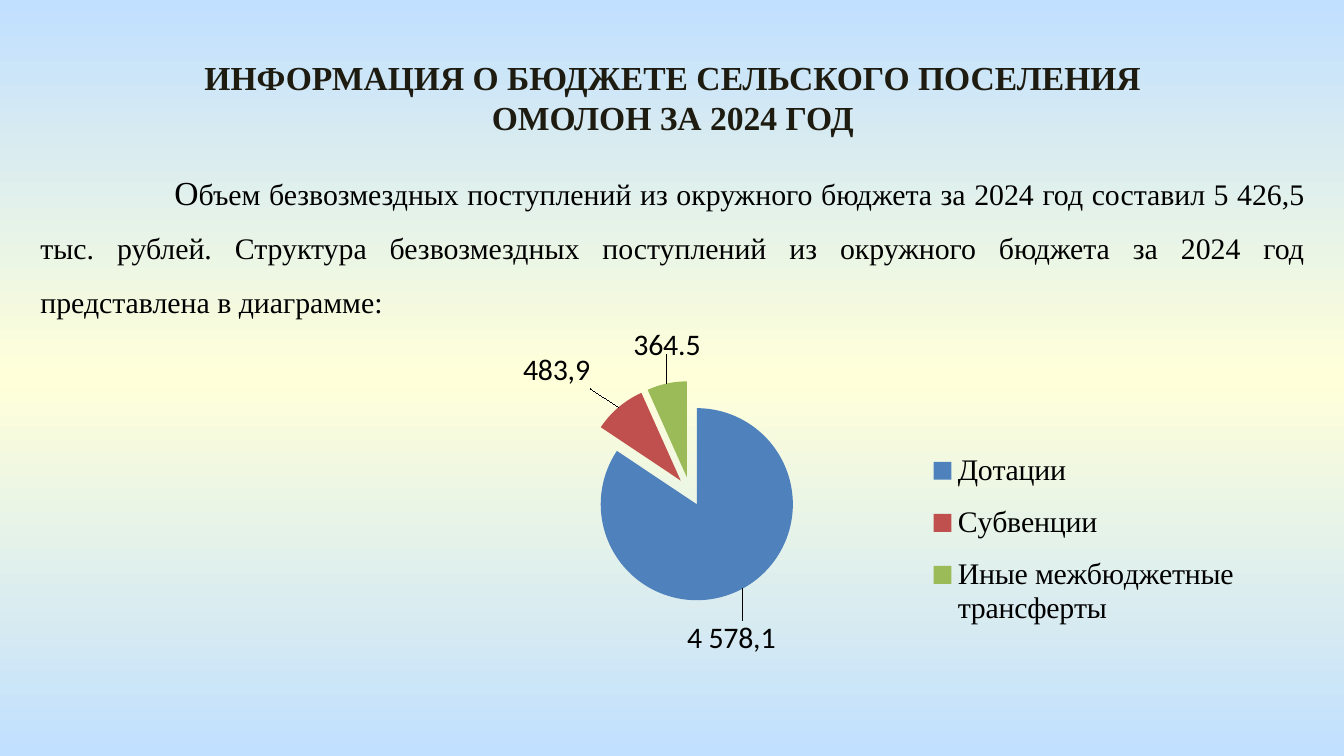
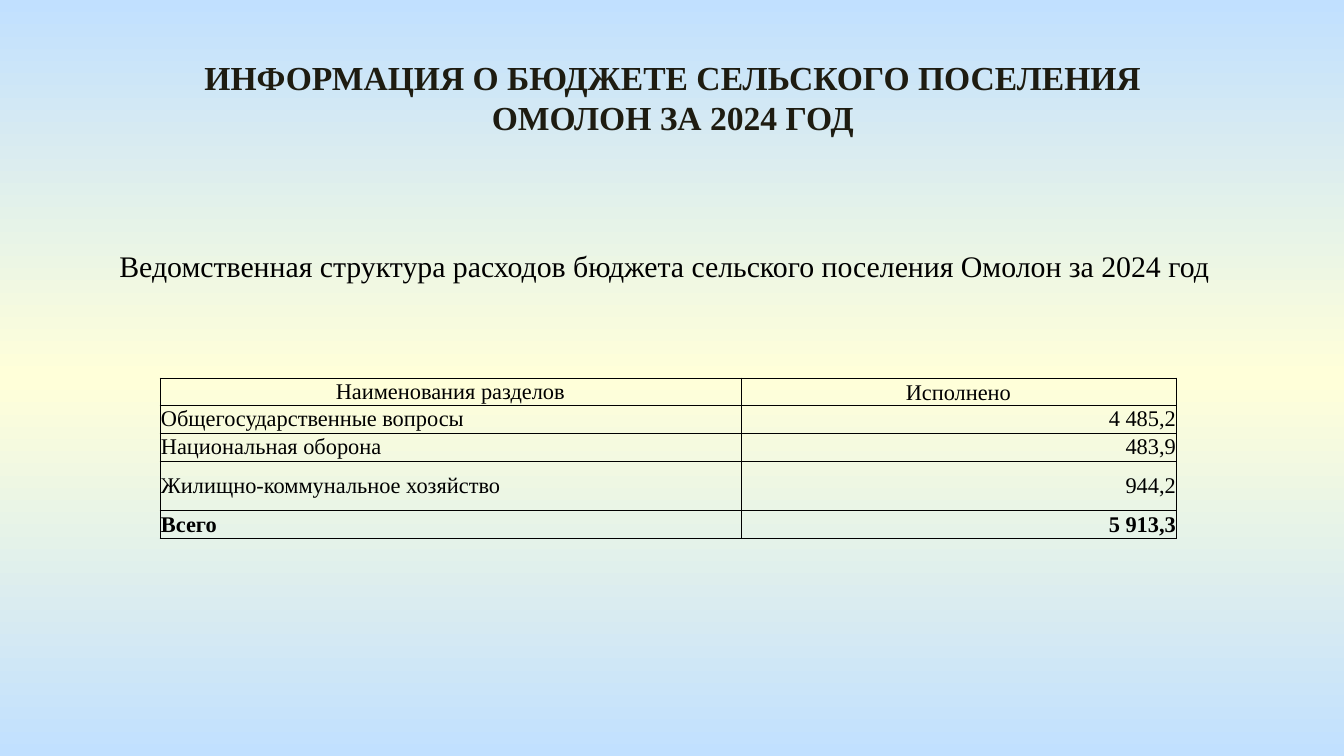
from copy import deepcopy

from lxml import etree
from pptx import Presentation
from pptx import util as u
from pptx.chart.data import CategoryChartData
from pptx.dml.color import RGBColor
from pptx.enum import chart as ch, text as t
from pptx.oxml import ns

PX = 914400 / 134.4
SERIF, SANS = "Times New Roman", "Calibri"
HUES = {"sky": "C1E0FF", "cream": "FFFFD9", "title": "1E1C11", "ink": "000000",
        "blue": "4F81BD", "red": "C0504D", "green": "9BBB59"}
TITLE = ["ИНФОРМАЦИЯ О БЮДЖЕТЕ СЕЛЬСКОГО ПОСЕЛЕНИЯ", "ОМОЛОН ЗА 2024 ГОД"]
ALIGN = {"l": t.PP_ALIGN.LEFT, "c": t.PP_ALIGN.CENTER,
         "r": t.PP_ALIGN.RIGHT, "j": t.PP_ALIGN.JUSTIFY}


def put(frame, lines, size=16, face=SERIF, hue="ink", bold=False, align="l",
        space=1.0, indent=0):
    """Fill a text frame; each line is a string or a list of (text, size) runs."""
    for i, line in enumerate(lines):
        para = frame.paragraphs[0] if i == 0 else frame.add_paragraph()
        para.alignment = ALIGN[align]
        para.line_spacing = space
        para.space_before = u.Pt(0)
        props = para._p.get_or_add_pPr()
        props.set("marL", "0")
        props.set("indent", str(int(indent * PX)))
        etree.SubElement(props, ns.qn("a:buNone"))
        for words, pts in [(line, size)] if isinstance(line, str) else line:
            run = para.add_run()
            run.text = words
            run.font.size = u.Pt(pts)
            run.font.name = face
            run.font.bold = bold
            run.font.color.rgb = RGBColor.from_string(HUES[hue])


def place(node, at, **vals):
    """Give a chart part a manual layout, as child number `at`."""
    for old in node.findall(ns.qn("c:layout")):
        node.remove(old)
    lay = etree.Element(ns.qn("c:layout"))
    man = etree.SubElement(lay, ns.qn("c:manualLayout"))
    for tag, val in vals.items():
        etree.SubElement(man, ns.qn("c:" + tag)).set("val", str(val))
    node.insert(at, lay)


prs = Presentation()
prs.slide_width, prs.slide_height = int(1344 * PX), int(756 * PX)

# Shared background
master = prs.slide_master
fill = master.background.fill
fill.gradient()
fill.gradient_angle = 270
stops = next(master.element.iter(ns.qn("a:gsLst")))
stops.insert(1, deepcopy(stops[0]))
for stop, hue, pos in zip(fill.gradient_stops, ["sky", "cream", "sky"], [0, 0.5, 1]):
    stop.color.rgb = RGBColor.from_string(HUES[hue])
    stop.position = pos

# Titles and body text of both slides
intro = [("О", 18), ("бъем безвозмездных поступлений из окружного бюджета за 2024 год "
                     "составил 5 426,5 тыс. рублей. Структура безвозмездных поступлений "
                     "из окружного бюджета за 2024 год представлена в диаграмме:", 16)]
head = "Ведомственная структура расходов бюджета сельского поселения Омолон за 2024 год"
pages = [((27, 145, 1292, 183), intro, 1.5, 134), ((106, 241, 1133, 86), head, 1.0, 0)]
slides = []
for box, words, space, indent in pages:
    slide = prs.slides.add_slide(prs.slide_layouts[1])
    slides.append(slide)
    title, body = slide.placeholders
    for shape, spot in [(title, (85, 50, 1176, 95)), (body, box)]:
        shape.left, shape.top, shape.width, shape.height = [int(n * PX) for n in spot]
        shape.text_frame.auto_size = t.MSO_AUTO_SIZE.NONE
        shape.text_frame.vertical_anchor = t.MSO_ANCHOR.TOP
    put(title.text_frame, TITLE, size=18, hue="title", bold=True, align="c")
    put(body.text_frame, [words], align="j", space=space, indent=indent)

# Slide 1: pie of transfers
data = CategoryChartData(number_format="#,##0.0")
data.categories = ["Дотации", "Субвенции", "Иные межбюджетные трансферты"]
data.add_series("Series 1", [4578.1, 483.9, 364.5])
spot = [int(n * PX) for n in (85, 327, 1175, 417)]
chart = slides[0].shapes.add_chart(ch.XL_CHART_TYPE.PIE, *spot, data).chart
chart.has_title = False
chart.font.size, chart.font.name = u.Pt(18), SANS
chart.font.color.rgb = RGBColor.from_string(HUES["ink"])
chart.has_legend = True
legend = chart.legend
legend.position = ch.XL_LEGEND_POSITION.RIGHT
legend.include_in_layout = False
legend.font.size, legend.font.name = u.Pt(16), SERIF
place(legend._element, 1, xMode="edge", yMode="edge", x=0.71, y=0.26, w=0.28, h=0.5)
place(chart._chartSpace.chart.plotArea, 0, layoutTarget="inner", xMode="edge",
      yMode="edge", x=0.42, y=0.13, w=0.19, h=0.53)

pie = chart.plots[0]
pie.vary_by_categories = True
row = pie.series[0]
labels = row.data_labels
labels.show_value = True
labels.number_format, labels.number_format_is_linked = "#,##0.0", False
labels.font.size = u.Pt(16)
parts = [("blue", "4 578,1", -0.05, 0.06), ("red", "483,9", -0.02, -0.03),
         ("green", None, 0.03, -0.05)]
for i, (hue, words, x, y) in enumerate(parts):
    point = row.points[i]
    point.format.fill.solid()
    point.format.fill.fore_color.rgb = RGBColor.from_string(HUES[hue])
    label = point.data_label
    if words:
        put(label.text_frame, [words], face=SANS)
    else:
        label.font.size = u.Pt(16)
    label.position = ch.XL_LABEL_POSITION.OUTSIDE_END
    place(label._dLbl, 1, x=x, y=y)
burst = etree.Element(ns.qn("c:explosion"))
burst.set("val", "15")
row._element.find(ns.qn("c:dPt")).addprevious(burst)

# Slide 2: spending table
rows = [("Наименования разделов", "Исполнено", 27),
        ("Общегосударственные вопросы", "4 485,2", 28),
        ("Национальная оборона", "483,9", 28),
        ("Жилищно-коммунальное хозяйство", "944,2", 50),
        ("Всего", "5 913,3", 28)]
spot = [int(n * PX) for n in (160, 378, 1016, 161)]
table = slides[1].shapes.add_table(len(rows), 2, *spot).table
table.first_row = table.horz_banding = False
for col, wide in zip(table.columns, (581, 435)):
    col.width = int(wide * PX)
for r, (*texts, high) in enumerate(rows):
    table.rows[r].height = int(high * PX)
    for c, words in enumerate(texts):
        cell = table.cell(r, c)
        cell.margin_left = cell.margin_right = cell.margin_top = int((r == 0 or c == 0) * PX)
        cell.margin_bottom = 0
        low = r == 0 and c == 1
        cell.vertical_anchor = t.MSO_ANCHOR.BOTTOM if low else t.MSO_ANCHOR.MIDDLE
        put(cell.text_frame, [words], size=12, bold=r == len(rows) - 1,
            align="c" if r == 0 else "lr"[c])
        props = cell._tc.get_or_add_tcPr()
        for side in ("lnL", "lnR", "lnT", "lnB"):
            line = etree.SubElement(props, ns.qn("a:" + side), w=str(u.Pt(0.5)))
            solid = etree.SubElement(line, ns.qn("a:solidFill"))
            etree.SubElement(solid, ns.qn("a:srgbClr"), val=HUES["ink"])
        cell.fill.background()

prs.save("out.pptx")
